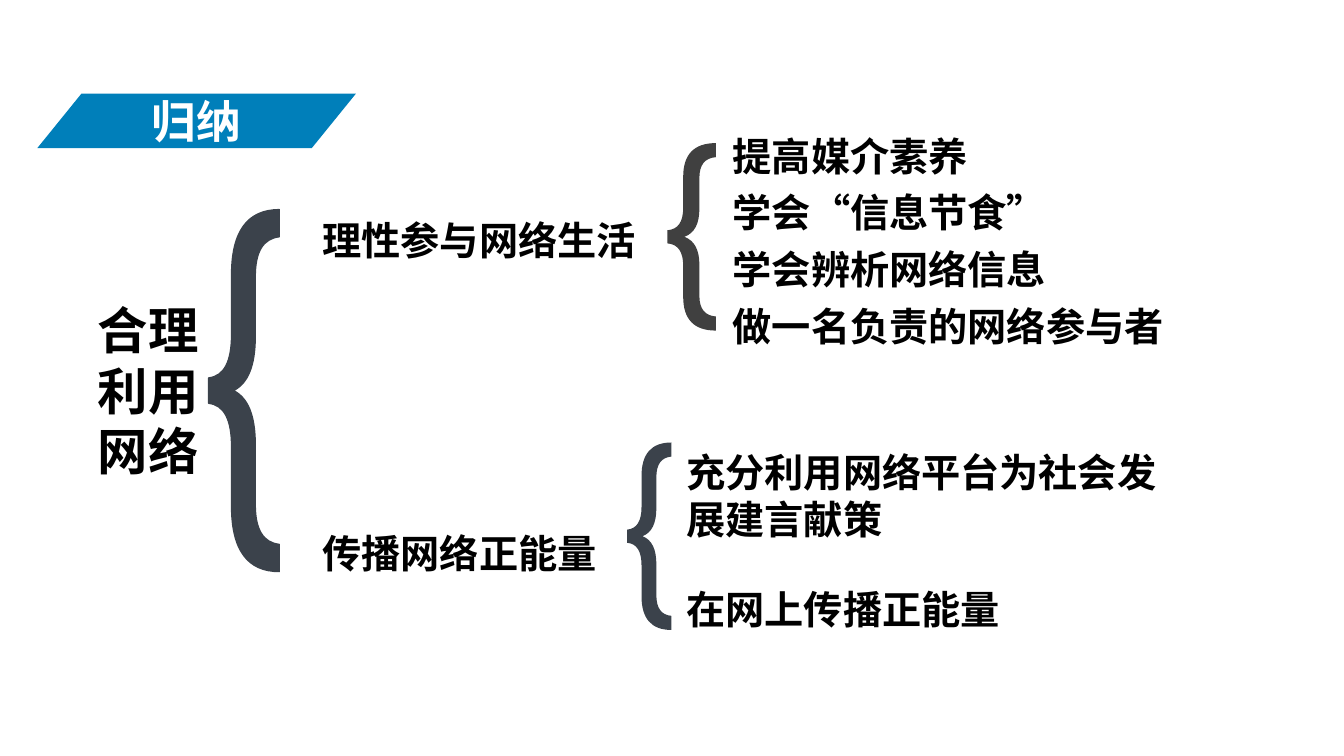
from pptx import Presentation
from pptx.dml.color import RGBColor
from pptx.enum.shapes import MSO_SHAPE as Preset
from pptx.enum.text import MSO_ANCHOR as Anchor, PP_ALIGN as Align
from pptx.oxml.ns import qn
from pptx.util import Inches, Pt

FONT = "Noto Sans CJK SC"
SLATE, GRAY, BLUE, BLACK, WHITE = "3B424B", "404040", "007FBA", "000000", "FFFFFF"
BRACE_START = (0, 46.5)
UPPER_SEGMENTS = [
    [(22, 46), (32.5, 42), (32.5, 34.5)],
    [(32.5, 18)],
    [(32.5, 6), (55, 0), (100, 0)],
    [(100, 7.5)],
    [(77.5, 8), (66, 11.5), (66, 18.5)],
    [(66, 35)],
    [(66, 43), (56, 48), (35, 50)],
]


def color(value):
    """Turn a hex string into a colour."""
    return RGBColor.from_string(value)


def add_brace(slide, left, top, width, height, fill, outlined=False):
    """Draw a left brace, its lower half mirroring the upper one."""
    upper = [BRACE_START] + [point for segment in UPPER_SEGMENTS for point in segment]
    outline = upper + [(x, 100 - y) for x, y in reversed(upper[:-1])]
    points = [(Inches(left + width * x / 100), Inches(top + height * y / 100)) for x, y in outline]
    builder = slide.shapes.build_freeform(*points[0])
    builder.add_line_segments(points[1:], close=True)
    brace = builder.convert_to_shape()
    bend_curves(brace)
    brace.shadow.inherit = False
    brace.fill.solid()
    brace.fill.fore_color.rgb = color(fill)
    if outlined:
        brace.line.color.rgb = color(fill)
        brace.line.width = Pt(1)
    else:
        brace.line.fill.background()


def bend_curves(brace):
    """Join each run of three straight steps into one cubic curve."""
    steps = iter(list(brace._element.iter(qn("a:lnTo"))))
    for segment in UPPER_SEGMENTS + UPPER_SEGMENTS[::-1]:
        group = [next(steps) for _ in segment]
        if len(group) == 3:
            curve = group[0].makeelement(qn("a:cubicBezTo"), {})
            group[0].addprevious(curve)
            for step in group:
                curve.append(step[0])
                step.getparent().remove(step)


def write(shape, words, size, ink=BLACK, align=Align.LEFT, anchor=Anchor.TOP):
    """Fill a shape with one bold paragraph."""
    frame = shape.text_frame
    frame.word_wrap = True
    frame.vertical_anchor = anchor
    frame.text = words
    paragraph = frame.paragraphs[0]
    paragraph.alignment = align
    font = paragraph.runs[0].font
    font.size, font.bold, font.name = Pt(size), True, FONT
    font.color.rgb = color(ink)
    east_asian = font._element.makeelement(qn("a:ea"), {"typeface": FONT})
    font._element.find(qn("a:latin")).addnext(east_asian)


def add_label(slide, words, left, top, width, height=0.57, size=28, **style):
    """Place a text label."""
    box = slide.shapes.add_textbox(Inches(left), Inches(top), Inches(width), Inches(height))
    write(box, words, size, **style)


def add_banner(slide, left, top, width, height):
    """Draw the slanted heading."""
    banner = slide.shapes.add_shape(Preset.PARALLELOGRAM, Inches(left), Inches(top),
                                    Inches(width), Inches(height))
    banner.adjustments[0] = 0.81
    banner.shadow.inherit = False
    banner.fill.solid()
    banner.fill.fore_color.rgb = color(BLUE)
    banner.line.fill.background()
    write(banner, "归纳", 32, WHITE, Align.CENTER, Anchor.MIDDLE)


def add_topic(slide, left, top):
    """Draw the main topic with its brace and two branches."""
    add_label(slide, "理性参与网络生活", left + 2.23, top + 0.02, 4.55)
    add_label(slide, "传播网络正能量", left + 2.23, top + 3.12, 4.01)
    add_brace(slide, left + 1.2, top, 0.7, 3.59, SLATE, outlined=True)
    add_label(slide, "合理利用网络", left, top + 0.83, 1.2, 1.92, 36,
              align=Align.CENTER, anchor=Anchor.MIDDLE)


def add_positive_energy(slide, left, top):
    """Draw the two points of the second branch."""
    add_label(slide, "充分利用网络平台为社会发展建言献策", left + 0.49, top + 0.01, 4.97, 1.04)
    add_label(slide, "在网上传播正能量", left + 0.49, top + 1.37, 4.54)
    add_brace(slide, left, top, 0.44, 1.86, SLATE)


def add_rational_use(slide, left, top):
    """Draw the four points of the first branch."""
    points = [("提高媒介素养", 4.83), ("学会“信息节食”", 5.81),
              ("学会辨析网络信息", 4.69), ("做一名负责的网络参与者", 6.16)]
    pitch = 1.69 / (len(points) - 1)
    for row, (words, width) in enumerate(points):
        add_label(slide, words, left + 0.55, top - 0.16 + row * pitch, width)
    add_brace(slide, left, top, 0.48, 1.86, GRAY)


def main():
    """Build and save the slide."""
    deck = Presentation()
    deck.slide_width, deck.slide_height = Inches(13.33), Inches(7.5)
    slide = deck.slides.add_slide(deck.slide_layouts[6])
    add_topic(slide, 0.87, 2.08)
    add_positive_energy(slide, 6.22, 4.39)
    add_banner(slide, 0.37, 0.93, 3.16, 0.54)
    add_rational_use(slide, 6.62, 1.42)
    deck.save("out.pptx")


if __name__ == "__main__":
    main()
